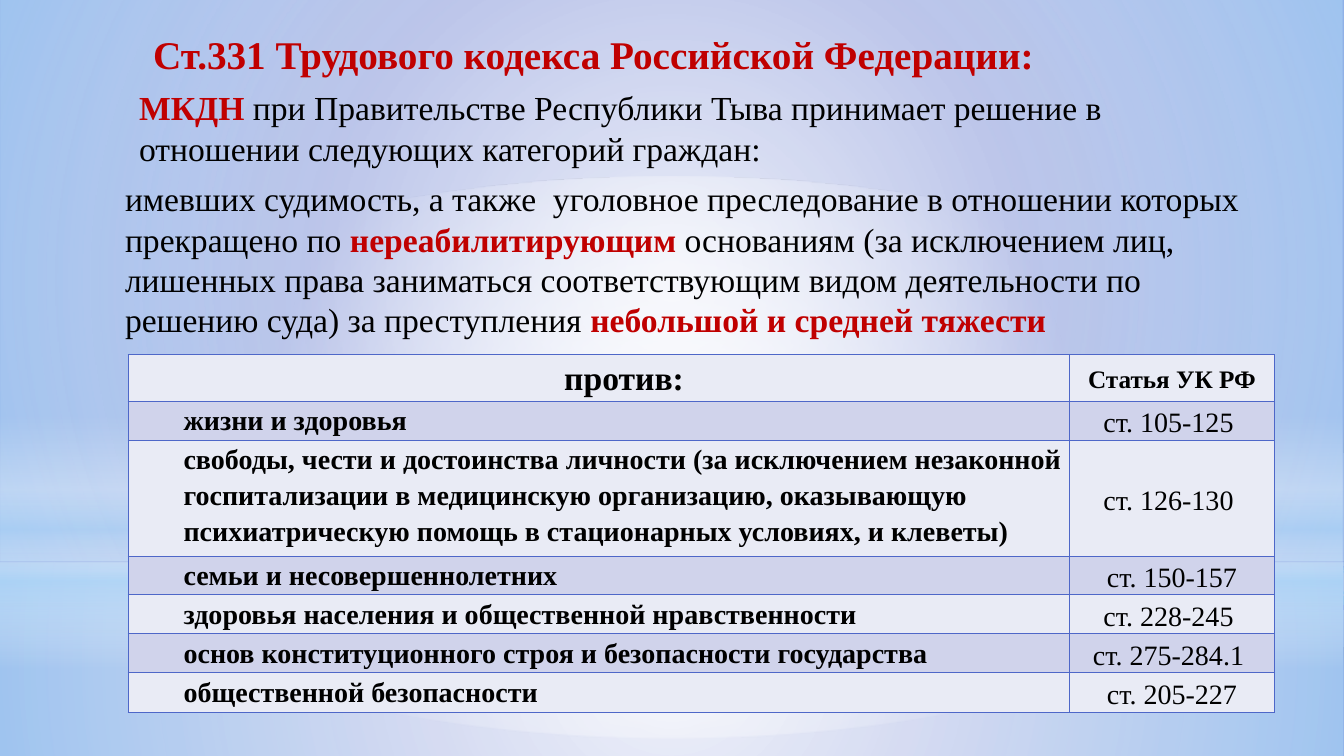
import pptx
import pptx.dml.color
import pptx.enum.shapes
import pptx.enum.text
import pptx.oxml
import pptx.oxml.ns
import pptx.util

RGBColor = pptx.dml.color.RGBColor
BLUE = RGBColor(0x4E, 0x67, 0xC8)
SKY = RGBColor(0xB4, 0xDC, 0xFA)
WHITE = RGBColor(0xFF, 0xFF, 0xFF)
RED = RGBColor(0xC0, 0x00, 0x00)
BLACK = RGBColor(0x00, 0x00, 0x00)
PALE_ROW = RGBColor(0xE9, 0xEB, 0xF5)
DARK_ROW = RGBColor(0xD0, 0xD3, 0xEB)

ALIGN = pptx.enum.text.PP_ALIGN
ANCHOR = pptx.enum.text.MSO_ANCHOR
SHAPE = pptx.enum.shapes.MSO_SHAPE
NAMESPACE = pptx.oxml.ns.nsdecls("a")

OFFENCES = [
    ("против:", "Статья УК РФ"),
    ("жизни и здоровья", "ст. 105-125 "),
    ("свободы, чести и достоинства личности (за исключением незаконной "
     "госпитализации в медицинскую организацию, оказывающую "
     "психиатрическую помощь в стационарных условиях, и клеветы)", "ст. 126-130 "),
    ("семьи и несовершеннолетних", "ст. 150-157"),
    ("здоровья населения и общественной нравственности", "ст. 228-245 "),
    ("основ конституционного строя и безопасности государства", "ст. 275-284.1 "),
    ("общественной безопасности", "ст. 205-227"),
]
COLUMN_SHARES = [70.05, 15.25]
ROW_SHARES = [6.15, 5.15, 15.35, 5.1, 5.15, 5.15, 5.3]


def apply_format(target, values):
    for name, value in values.items():
        setattr(target, name, value)


class SlideBuilder:
    """Holds the style and the slide; lengths are percents of the slide's size."""

    font_name = "Times New Roman"

    def __init__(self, presentation, layout_index):
        self.width = presentation.slide_width
        self.height = presentation.slide_height
        self.slide = presentation.slides.add_slide(presentation.slide_layouts[layout_index])
        self.shapes = self.slide.shapes

    def across(self, share):
        return round(self.width * share / 100)

    def down(self, share):
        return round(self.height * share / 100)

    def frame(self, left, top, width, height):
        return self.across(left), self.down(top), self.across(width), self.down(height)

    def background(self, color):
        self.slide.background.fill.solid()
        self.slide.background.fill.fore_color.rgb = color

    def glow(self, kind, box, stops, angle=None):
        """Add a gradient shape; stops are (position, color, opacity) in percent."""
        shape = self.shapes.add_shape(kind, *self.frame(*box))
        shape.shadow.inherit = False
        shape.line.fill.background()
        marks = "".join(
            f'<a:gs pos="{position * 1000}"><a:srgbClr val="{color}">'
            f'<a:alpha val="{opacity * 1000}"/></a:srgbClr></a:gs>'
            for position, color, opacity in stops)
        if angle is None:
            direction = ('<a:path path="circle"><a:fillToRect l="50000" t="50000" '
                         'r="50000" b="50000"/></a:path>')
        else:
            direction = f'<a:lin ang="{angle * 60000}" scaled="0"/>'
        gradient = pptx.oxml.parse_xml(
            f'<a:gradFill {NAMESPACE} rotWithShape="1"><a:gsLst>{marks}</a:gsLst>'
            f'{direction}</a:gradFill>')
        shape.element.spPr.find(pptx.oxml.ns.qn("a:prstGeom")).addnext(gradient)

    def add_runs(self, paragraph, runs, size):
        """Fill a paragraph with (text, color, bold) runs."""
        for text, color, bold in runs:
            run = paragraph.add_run()
            run.text = text
            apply_format(run.font, {"name": self.font_name, "bold": bold,
                                    "size": pptx.util.Pt(size)})
            run.font.color.rgb = color

    def placeholder(self, index, box, runs, size, anchor=ANCHOR.TOP, wrap=True):
        shape = self.slide.placeholders[index]
        self.shapes.element.append(shape.element)
        apply_format(shape, dict(zip(("left", "top", "width", "height"), self.frame(*box))))
        apply_format(shape.text_frame, {
            "word_wrap": wrap, "vertical_anchor": anchor,
            "auto_size": pptx.enum.text.MSO_AUTO_SIZE.NONE})
        paragraph = shape.text_frame.paragraphs[0]
        apply_format(paragraph, {"alignment": ALIGN.LEFT, "space_before": pptx.util.Pt(0)})
        properties = paragraph._p.get_or_add_pPr()
        properties.set("marL", "0")
        properties.set("indent", "0")
        properties.append(pptx.oxml.parse_xml(f"<a:buNone {NAMESPACE}/>"))
        self.add_runs(paragraph, runs, size)

    def cell(self, cell, text, fill, size, bold, alignment, anchor, indent):
        side = pptx.util.Inches(0.05)
        apply_format(cell, {"margin_left": side, "margin_right": side, "margin_top": 0,
                            "margin_bottom": 0, "vertical_anchor": anchor})
        cell.fill.solid()
        cell.fill.fore_color.rgb = fill
        properties = cell._tc.get_or_add_tcPr()
        for position, edge in enumerate(("lnL", "lnR", "lnT", "lnB")):
            properties.insert(position, pptx.oxml.parse_xml(
                f'<a:{edge} {NAMESPACE} w="12700"><a:solidFill>'
                f'<a:srgbClr val="{BLUE}"/></a:solidFill></a:{edge}>'))
        paragraph = cell.text_frame.paragraphs[0]
        apply_format(paragraph, {"alignment": alignment, "line_spacing": 1.15})
        paragraph._p.get_or_add_pPr().set("marL", str(pptx.util.Inches(indent)))
        self.add_runs(paragraph, [(text, BLACK, bold)], size)

    def table(self, left, top, rows):
        box = self.frame(left, top, sum(COLUMN_SHARES), sum(ROW_SHARES))
        table = self.shapes.add_table(len(rows), len(COLUMN_SHARES), *box).table
        for column, share in zip(table.columns, COLUMN_SHARES):
            column.width = self.across(share)
        for number, (row, share, (offence, article)) in enumerate(
                zip(table.rows, ROW_SHARES, rows)):
            row.height = self.down(share)
            header = number == 0
            fill = DARK_ROW if number % 2 else PALE_ROW
            self.cell(row.cells[0], offence, fill, 24 if header else 20, True,
                      ALIGN.CENTER if header else ALIGN.LEFT, ANCHOR.TOP, 0.5)
            self.cell(row.cells[1], article, fill, 18 if header else 20, header,
                      ALIGN.CENTER, ANCHOR.MIDDLE, 0)


def main():
    presentation = pptx.Presentation()
    presentation.slide_width = pptx.util.Inches(13.33)
    presentation.slide_height = pptx.util.Inches(7.5)
    builder = SlideBuilder(presentation, 3)

    builder.background(BLUE)
    builder.glow(SHAPE.RECTANGLE, (0, 74.4, 100, 25.6),
                 [(0, WHITE, 91), (37, WHITE, 76), (100, SKY, 79)])
    builder.glow(SHAPE.RECTANGLE, (0, 0, 100, 74.4),
                 [(0, WHITE, 89), (48, WHITE, 62), (100, SKY, 79)])
    builder.glow(SHAPE.RECTANGLE, (0, 54.93, 100, 33.33),
                 [(0, WHITE, 0), (29, WHITE, 30), (45, SKY, 40),
                  (55, WHITE, 26), (65, SKY, 60), (100, WHITE, 0)], angle=90)
    builder.glow(SHAPE.OVAL, (0, 23.33, 100, 74.4), [(0, WHITE, 100), (56, WHITE, 0)])

    builder.placeholder(0, (10.65, 3.33, 67.07, 13.87), [
        ("Ст.331 Трудового кодекса Российской Федерации:", RED, True)], 28, wrap=False)
    builder.table(9.53, 46.93, OFFENCES)
    builder.placeholder(1, (9.6, 10.8, 83.12, 12.13), [
        ("МКДН ", RED, True),
        ("при Правительстве Республики Тыва принимает решение в отношении "
         "следующих категорий граждан:", BLACK, False)], 24, anchor=ANCHOR.MIDDLE)
    builder.placeholder(2, (8.55, 22.93, 85.15, 22.93), [
        ("имевших судимость, а также  уголовное преследование в отношении которых "
         "прекращено по ", BLACK, False),
        ("нереабилитирующим ", RED, True),
        ("основаниям (за исключением лиц, лишенных права заниматься соответствующим "
         "видом деятельности по решению суда) за преступления ", BLACK, False),
        ("небольшой и средней тяжести", RED, True)], 24)
    presentation.save("out.pptx")


if __name__ == "__main__":
    main()
